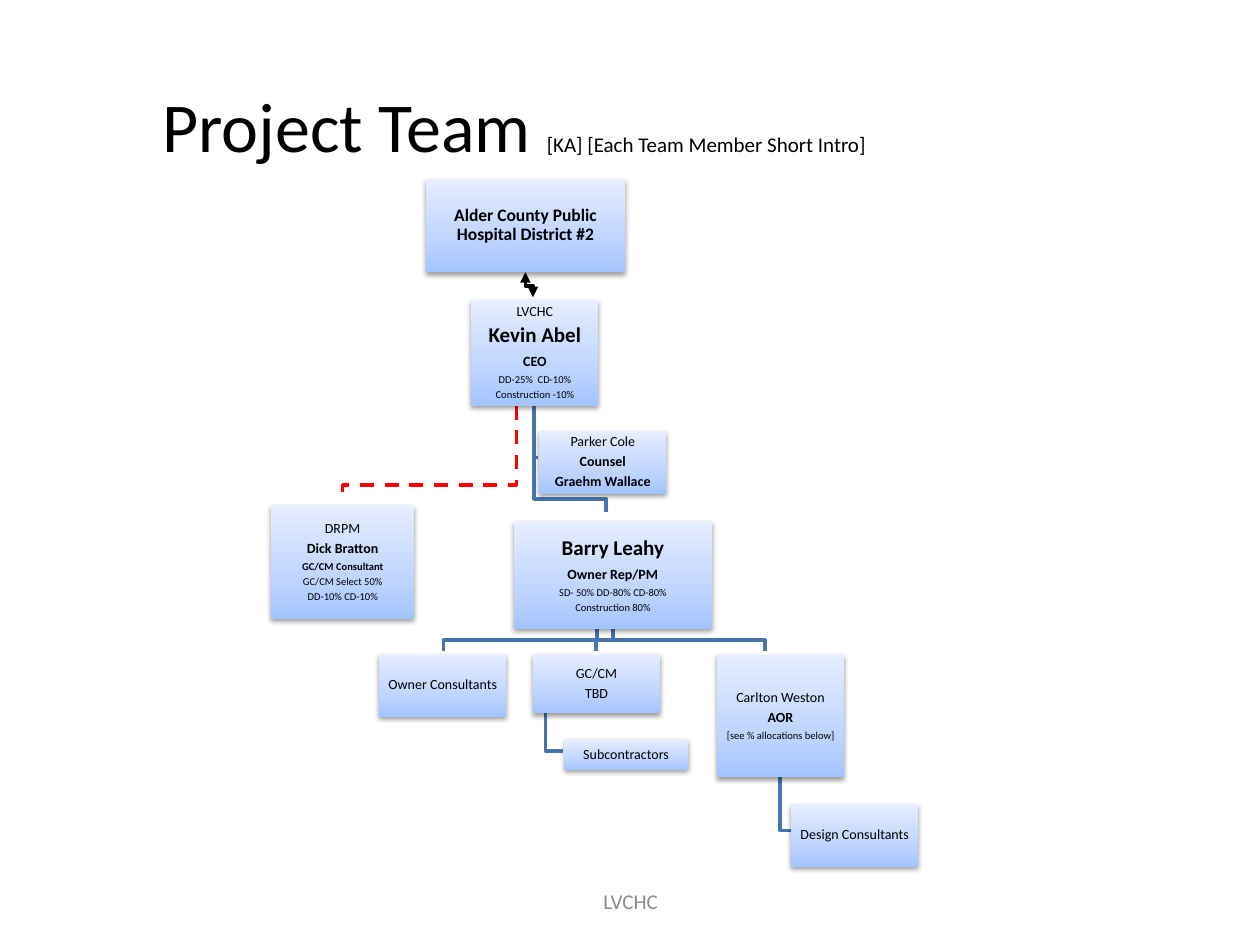
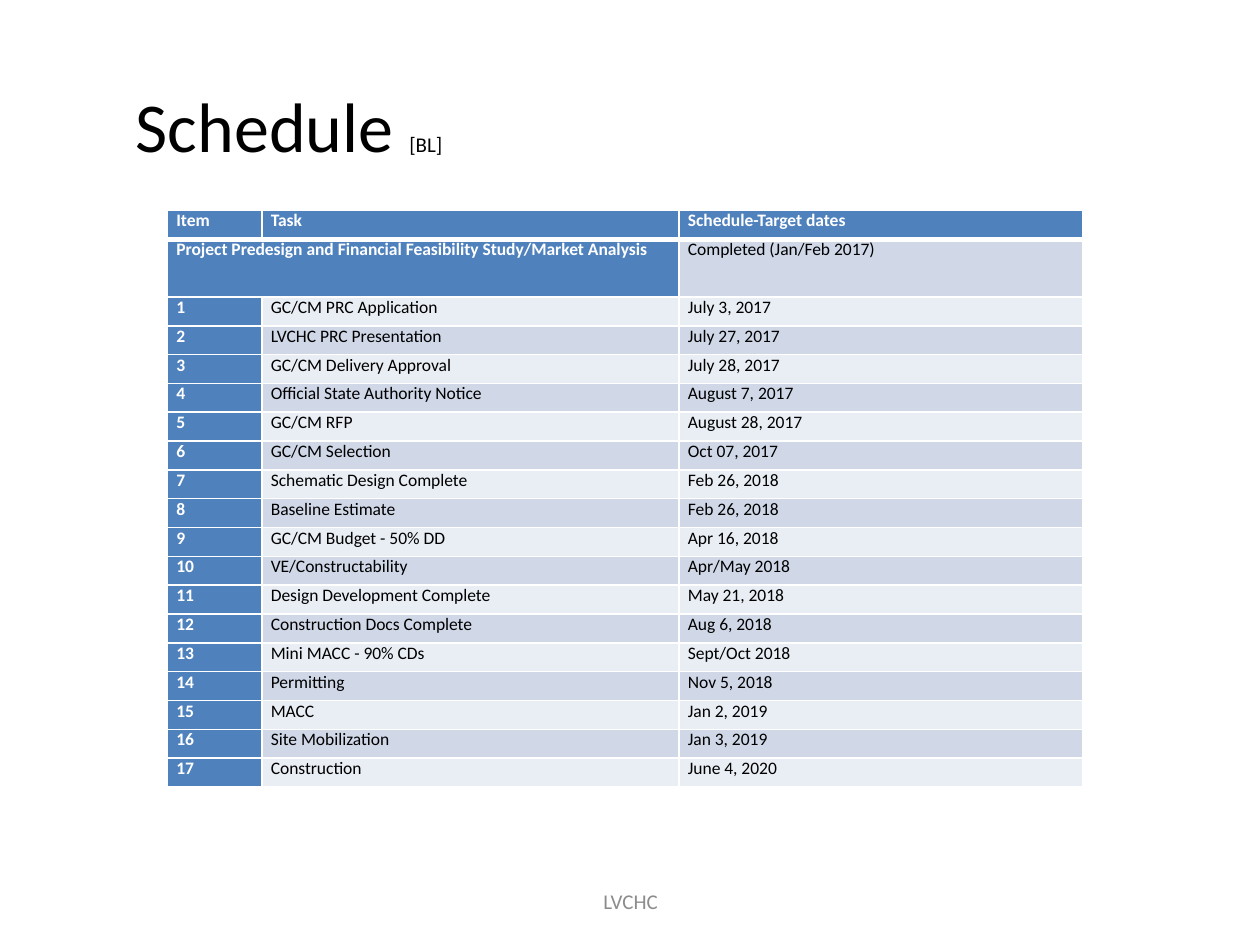
from copy import deepcopy

from lxml import etree
from pptx import Presentation
from pptx.dml.color import RGBColor
from pptx.enum.dml import MSO_LINE
from pptx.enum.shapes import MSO_SHAPE
from pptx.enum.text import MSO_ANCHOR, PP_ALIGN
from pptx.oxml.ns import qn
from pptx.util import Inches, Pt

RECTANGLE = MSO_SHAPE.RECTANGLE
DASH = MSO_LINE.DASH
MIDDLE = MSO_ANCHOR.MIDDLE
LEFT, CENTER, JUSTIFY = PP_ALIGN.LEFT, PP_ALIGN.CENTER, PP_ALIGN.JUSTIFY

COLUMNS, ROWS = 100, 75
BLACK, WHITE, GRAY, RED = "000000", "FFFFFF", "8C8C8C", "FF0000"
LINE_BLUE, HEADER_BLUE = "4875AC", "4F81BD"
BANDS = ("E9EDF4", "D0D8E8")
BOX_GRADIENT = ((0, "A4C4FF"), (0.35, "BFD4FF"), (1, "E6EEFF"))
ORGANIZATION = "LVCHC"

TEAM_BOXES = [
    (33.8, 14.2, 15.8, 7.4, [("Alder County Public Hospital District #2", 10, True)]),
    (37.4, 23.8, 10.1, 8.4, [(ORGANIZATION, 8, False), ("Kevin Abel", 12, True),
                             ("CEO", 8, True), ("DD-25%  CD-10%", 6, False),
                             ("Construction -10%", 6, False)]),
    (40.8, 41.4, 15.7, 8.5, [("Barry Leahy", 12, True), ("Owner Rep/PM", 8, True),
                             ("SD- 50% DD-80% CD-80%", 6, False),
                             ("Construction 80%", 6, False)]),
    (56.9, 51.9, 10.1, 9.8, [("Carlton Weston", 8, False), ("AOR", 8, True),
                             ("[see % allocations below]", 6, False)]),
    (62.8, 63.8, 10.1, 5, [("Design Consultants", 8, False)]),
    (42.3, 51.9, 10.1, 4.7, [("GC/CM", 8, False), ("TBD", 8, False)]),
    (44.8, 58.7, 9.8, 2.4, [("Subcontractors", 8, False)]),
    (30.1, 51.9, 10.1, 5, [("Owner Consultants", 8, False)]),
    (21.5, 40.1, 11.4, 9, [("DRPM", 8, False), ("Dick Bratton", 8, True),
                           ("GC/CM Consultant", 6, True), ("GC/CM Select 50%", 6, False),
                           ("DD-10% CD-10%", 6, False)]),
    (42.8, 34.2, 10.1, 5, [("Parker Cole", 8, False), ("Counsel", 8, True),
                           ("Graehm Wallace", 8, True)]),
]

REPORTING_LINES = [
    ((42.4, 32.2), 36.3, (42.7, 36.3)),
    ((47.4, 49.9), 50.8, (35.2, 51.7)),
    ((43.3, 56.6), 59.6, (44.7, 59.6)),
    ((48.6, 49.9), 50.8, (47.3, 51.7)),
    ((61.9, 61.7), 65.9, (62.8, 65.9)),
    ((48.7, 49.9), 50.8, (60.7, 51.7)),
    ((42.4, 32.2), 39.6, (48.1, 40.6)),
]

SCHEDULE_HEADINGS = ("Item", "Task", "Schedule-Target dates")
PREDESIGN = ("Project Predesign and Financial Feasibility Study/Market Analysis", "",
             "Completed (Jan/Feb 2017)")
MILESTONES = [
    ("GC/CM PRC Application", "July 3, 2017"),
    (f"{ORGANIZATION} PRC Presentation", "July 27, 2017"),
    ("GC/CM Delivery Approval", "July 28, 2017"),
    ("Official State Authority Notice", "August 7, 2017"),
    ("GC/CM RFP", "August 28, 2017"),
    ("GC/CM Selection", "Oct 07, 2017"),
    ("Schematic Design Complete", "Feb 26, 2018"),
    ("Baseline Estimate", "Feb 26, 2018"),
    ("GC/CM Budget - 50% DD", "Apr 16, 2018"),
    ("VE/Constructability", "Apr/May 2018"),
    ("Design Development Complete", "May 21, 2018"),
    ("Construction Docs Complete", "Aug 6, 2018"),
    ("Mini MACC - 90% CDs", "Sept/Oct 2018"),
    ("Permitting", "Nov 5, 2018"),
    ("MACC", "Jan 2, 2019"),
    ("Site Mobilization", "Jan 3, 2019"),
    ("Construction", "June 4, 2020"),
]


def rgb(value):
    return RGBColor.from_string(value)


def write(paragraph, text, size=10, color=BLACK, bold=False, align=CENTER, font="Calibri"):
    paragraph.alignment = align
    run = paragraph.add_run()
    run.text = text
    run.font.name = font
    run.font.size = Pt(size)
    run.font.bold = bold
    run.font.color.rgb = rgb(color)


def set_insets(target, horizontal, vertical):
    target.margin_left = target.margin_right = Inches(horizontal)
    target.margin_top = target.margin_bottom = Inches(vertical)


def add_color(parent, color):
    fill = etree.SubElement(parent, qn("a:solidFill"))
    return etree.SubElement(fill, qn("a:srgbClr"), val=color)


def add_borders(cell, top, bottom):
    properties = cell._tc.get_or_add_tcPr()
    for index, (side, width) in enumerate((("L", 1), ("R", 1), ("T", top), ("B", bottom))):
        border = etree.Element(qn(f"a:ln{side}"), w=str(Pt(width)))
        add_color(border, WHITE)
        properties.insert(index, border)


def add_shadow(shape):
    shape.shadow.inherit = False
    effects = shape._element.spPr.find(qn("a:effectLst"))
    shadow = etree.SubElement(effects, qn("a:outerShdw"), blurRad=str(Pt(3.1)),
                              dist=str(Pt(1.6)), dir="5400000", rotWithShape="0")
    color = etree.SubElement(shadow, qn("a:srgbClr"), val=BLACK)
    etree.SubElement(color, qn("a:alpha"), val="38000")


class Deck:
    def __init__(self):
        self.presentation = Presentation()
        self.presentation.slide_width = Inches(10)
        self.presentation.slide_height = Inches(7.5)
        self.slide = None

    def x(self, columns):
        return round(self.presentation.slide_width * columns / COLUMNS)

    def y(self, rows):
        return round(self.presentation.slide_height * rows / ROWS)

    def area(self, left, top, width, height):
        return self.x(left), self.y(top), self.x(width), self.y(height)

    def new_slide(self, title, note, title_left):
        self.slide = self.presentation.slides.add_slide(self.presentation.slide_layouts[6])
        paragraph = self.text_box(title_left, 3.6, 95 - title_left, 12.5)
        write(paragraph, f"{title} ", size=40, align=LEFT)
        write(paragraph, note, size=12, align=LEFT)
        write(self.text_box(34.2, 69.5, 31.7, 4), ORGANIZATION, size=12, color=GRAY)

    def text_box(self, *place):
        frame = self.slide.shapes.add_textbox(*self.area(*place)).text_frame
        frame.word_wrap = True
        frame.vertical_anchor = MIDDLE
        return frame.paragraphs[0]

    def box(self, left, top, width, height, lines):
        shape = self.slide.shapes.add_shape(RECTANGLE, *self.area(left, top, width, height))
        shape.line.fill.background()
        shape.fill.gradient()
        shape.fill.gradient_angle = 90
        stop_list = shape._element.spPr.find(f".//{qn('a:gsLst')}")
        stop_list.insert(1, deepcopy(stop_list[0]))
        for stop, (position, color) in zip(shape.fill.gradient_stops, BOX_GRADIENT):
            stop.position = position
            stop.color.rgb = rgb(color)
        add_shadow(shape)
        frame = shape.text_frame
        frame.word_wrap = True
        frame.vertical_anchor = MIDDLE
        set_insets(frame, 0.01, 0.01)
        for index, (text, size, bold) in enumerate(lines):
            paragraph = frame.add_paragraph() if index else frame.paragraphs[0]
            paragraph.line_spacing = 0.9
            paragraph.space_after = Pt(0.35 * size)
            write(paragraph, text, size=size, bold=bold)

    def elbow(self, start, bend, end, color=LINE_BLUE, dash=None, arrows=False):
        corners = [(start[0], bend), (end[0], bend)]
        if end[1] != bend:
            corners.append(end)
        builder = self.slide.shapes.build_freeform(self.x(start[0]), self.y(start[1]))
        builder.add_line_segments([(self.x(x), self.y(y)) for x, y in corners], close=False)
        shape = builder.convert_to_shape()
        shape.shadow.inherit = False
        shape.fill.background()
        shape.line.color.rgb = rgb(color)
        shape.line.width = Pt(2)
        if dash:
            shape.line.dash_style = dash
        if arrows:
            line = shape._element.spPr.find(qn("a:ln"))
            for tip in ("headEnd", "tailEnd"):
                etree.SubElement(line, qn(f"a:{tip}"), type="triangle")

    def table(self, left, top, widths, heights, records):
        place = self.area(left, top, sum(widths), sum(heights))
        table = self.slide.shapes.add_table(len(heights), len(widths), *place).table
        table.first_row = table.horz_banding = False
        for column, width in zip(table.columns, widths):
            column.width = self.x(width)
        for row, height in zip(table.rows, heights):
            row.height = self.y(height)
        table.cell(1, 0).merge(table.cell(1, 1))
        for row_index, record in enumerate(records):
            for column_index, text in enumerate(record):
                cell = table.cell(row_index, column_index)
                heading = row_index == 0 or column_index == 0 or cell.is_spanned
                cell.fill.solid()
                cell.fill.fore_color.rgb = rgb(HEADER_BLUE if heading else BANDS[row_index % 2])
                add_borders(cell, 3 if row_index == 1 else 1, 3 if row_index == 0 else 1)
                set_insets(cell, 0.07, 0)
                if text:
                    write(cell.text_frame.paragraphs[0], text, bold=heading,
                          color=WHITE if heading else BLACK, align=JUSTIFY)


def build_team(deck):
    deck.new_slide("Project Team", "[KA] [Each Team Member Short Intro]", 11.9)
    for start, bend, end in REPORTING_LINES:
        deck.elbow(start, bend, end)
    deck.elbow((41, 32.2), 38.5, (27.2, 39.4), color=RED, dash=DASH)
    deck.elbow((41.7, 21.6), 22.7, (42.3, 23.6), color=BLACK, arrows=True)
    for team_box in TEAM_BOXES:
        deck.box(*team_box)


def build_schedule(deck):
    deck.new_slide("Schedule", "[BL]", 9.8)
    records = [SCHEDULE_HEADINGS, PREDESIGN]
    records += [(str(number), *milestone) for number, milestone in enumerate(MILESTONES, 1)]
    row_height = 2.29
    heights = [row_height] * len(records)
    heights[1] = 2 * row_height
    deck.table(13.3, 16.7, (7.5, 33.1, 32), heights, records)


def main():
    deck = Deck()
    build_team(deck)
    build_schedule(deck)
    deck.presentation.save("out.pptx")


if __name__ == "__main__":
    main()
